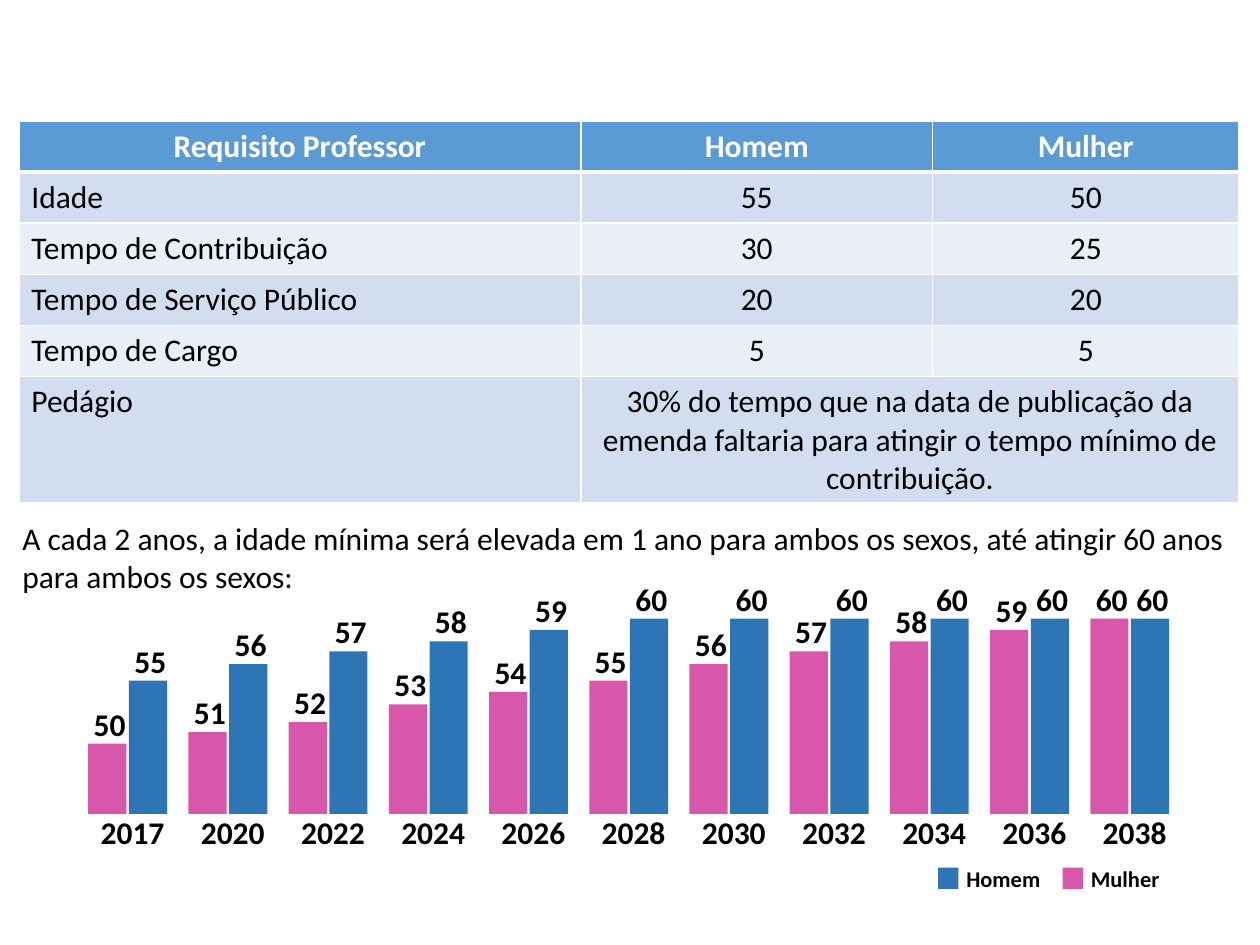
from lxml import etree
from pptx import Presentation
from pptx.dml.color import RGBColor
from pptx.enum.shapes import MSO_SHAPE
from pptx.enum.text import MSO_AUTO_SIZE, PP_ALIGN
from pptx.oxml.ns import qn
from pptx.util import Cm, Pt

BLUE, PINK, BLACK, WHITE = "2E75B6", "D957AB", "000000", "FFFFFF"
HEADER, BAND_DARK, BAND_LIGHT = "5B9BD5", "D2DEEF", "EAEFF7"

REQUIREMENTS = [
    ("Requisito Professor", "Homem", "Mulher"),
    ("Idade", "55", "50"),
    ("Tempo de Contribuição", "30", "25"),
    ("Tempo de Serviço Público", "20", "20"),
    ("Tempo de Cargo", "5", "5"),
    ("Pedágio", "30% do tempo que na data de publicação da emenda faltaria "
                "para atingir o tempo mínimo de contribuição.", ""),
]
RULE = ("A cada 2 anos, a idade mínima será elevada em 1 ano para ambos os "
        "sexos, até atingir 60 anos para ambos os sexos:")
YEARS = [2017, *range(2020, 2039, 2)]
# Bar height in centimetres for each age from 50 to 60
BAR_HEIGHTS = [1.42, 1.65, 1.85, 2.21, 2.46, 2.69, 3.02, 3.28, 3.48, 3.71, 3.94]


def color(value):
    return RGBColor.from_string(value)


def format_text(frame, size, shade=BLACK, bold=False, align=PP_ALIGN.LEFT):
    for para in frame.paragraphs:
        para.alignment = align
        for span in para.runs:
            span.font.name = "Calibri"
            span.font.size = Pt(size)
            span.font.bold = bold
            span.font.color.rgb = color(shade)


def add_text(page, text, left, top, width, height, size=18, bold=True, wrap=False):
    box = page.shapes.add_textbox(Cm(left), Cm(top), Cm(width), Cm(height))
    frame = box.text_frame
    frame.text = text
    frame.word_wrap = wrap
    frame.auto_size = MSO_AUTO_SIZE.SHAPE_TO_FIT_TEXT
    format_text(frame, size, bold=bold)


def add_block(page, left, top, width, height, shade):
    block = page.shapes.add_shape(
        MSO_SHAPE.RECTANGLE, Cm(left), Cm(top), Cm(width), Cm(height))
    block.shadow.inherit = False
    block.fill.solid()
    block.fill.fore_color.rgb = color(shade)
    block.line.fill.background()


def add_borders(cell, bottom):
    properties = cell._tc.get_or_add_tcPr()
    for side, points in (("L", 1), ("R", 1), ("T", 1), ("B", bottom)):
        line = etree.SubElement(properties, qn(f"a:ln{side}"), w=str(Pt(points)))
        fill = etree.SubElement(line, qn("a:solidFill"))
        etree.SubElement(fill, qn("a:srgbClr"), val=WHITE)


def add_requirements(page, left, top, widths, heights):
    table = page.shapes.add_table(
        len(heights), len(widths), Cm(left), Cm(top),
        Cm(sum(widths)), Cm(sum(heights))).table
    for column, width in zip(table.columns, widths):
        column.width = Cm(width)
    for row, height in zip(table.rows, heights):
        row.height = Cm(height)

    for r, texts in enumerate(REQUIREMENTS):
        is_header = r == 0
        fill = HEADER if is_header else BAND_DARK if r % 2 else BAND_LIGHT
        for c, text in enumerate(texts):
            cell = table.cell(r, c)
            cell.text = text
            centred = is_header or c > 0
            format_text(cell.text_frame, 18, WHITE if is_header else BLACK, is_header,
                        PP_ALIGN.CENTER if centred else PP_ALIGN.LEFT)
            add_borders(cell, bottom=3 if is_header else 1)
            cell.fill.solid()
            cell.fill.fore_color.rgb = color(fill)
    # The toll applies to both sexes
    table.cell(5, 1).merge(table.cell(5, 2))


def add_age_bar(page, left, base, age, shade):
    height = BAR_HEIGHTS[age - 50]
    add_block(page, left, base - height, 0.77, height, shade)
    add_text(page, str(age), left - 0.14, base - height - 0.91, 1.2, 1.02)


def add_age_bars(page, left, base, pitch):
    for step, year in enumerate(YEARS):
        x = left + step * pitch
        add_text(page, str(year), x, base - 0.15, 1.82, 1.02)
        add_age_bar(page, x, base, 50 + step, PINK)
        add_age_bar(page, x + 0.82, base, min(55 + step, 60), BLUE)


def add_legend(page, left, top, pitch):
    for index, (name, shade) in enumerate((("Homem", BLUE), ("Mulher", PINK))):
        x = left + index * pitch
        add_block(page, x, top, 0.41, 0.43, shade)
        add_text(page, name, x + 0.32, top - 0.17, 2.1, 0.81, size=12.8, wrap=True)


def main():
    deck = Presentation()
    deck.slide_width, deck.slide_height = Cm(25.4), Cm(19.05)
    page = deck.slides.add_slide(deck.slide_layouts[6])

    # Age bars by year, with legend
    add_age_bars(page, left=1.78, base=16.41, pitch=2.02)
    add_legend(page, left=18.91, top=17.49, pitch=2.51)

    # Requirements table and the rule below it
    add_requirements(page, left=0.38, top=2.44, widths=[11.33, 7.09, 6.18],
                     heights=[1.03] * 5 + [2.54])
    add_text(page, RULE, 0.2, 10.34, 24.77, 1.8, bold=False, wrap=True)

    deck.save("out.pptx")


if __name__ == "__main__":
    main()
